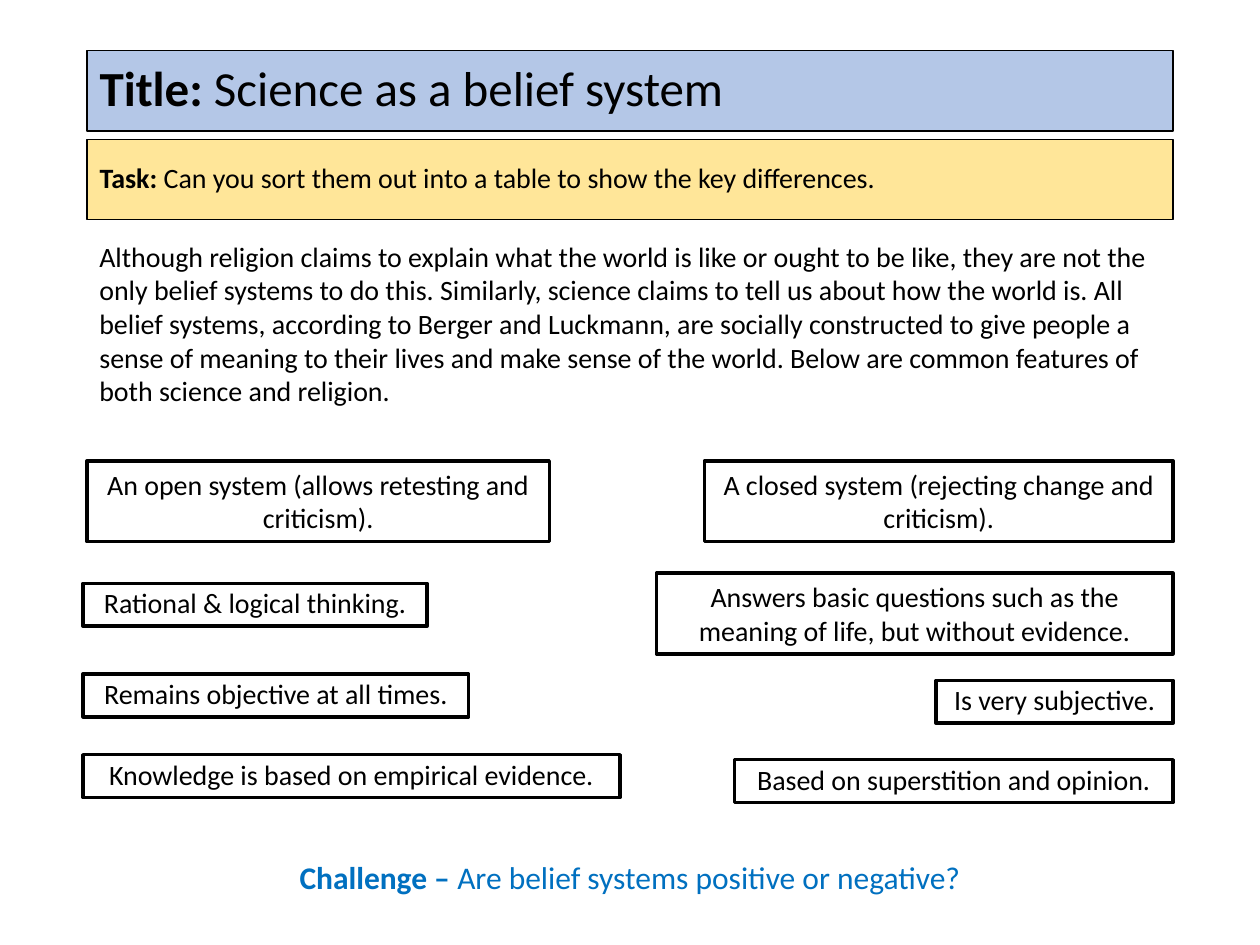
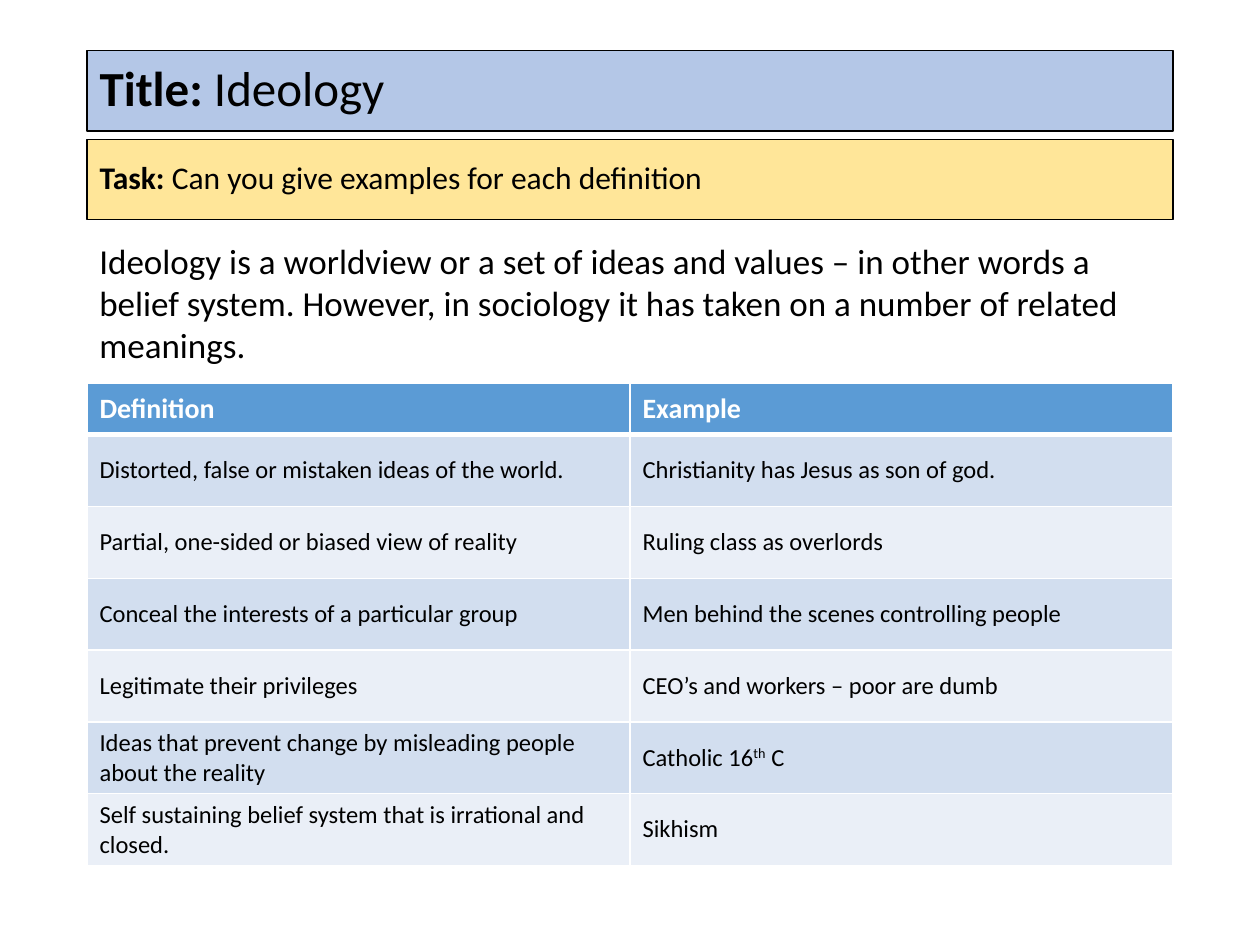
from lxml.etree import SubElement
from pptx import Presentation
from pptx.dml.color import RGBColor
from pptx.enum.text import MSO_ANCHOR, MSO_AUTO_SIZE, PP_ALIGN
from pptx.oxml.ns import qn
from pptx.util import Inches, Pt

BLACK = RGBColor(0x00, 0x00, 0x00)
WHITE = RGBColor(0xFF, 0xFF, 0xFF)
TITLE_BLUE = RGBColor(0xB4, 0xC7, 0xE7)
TASK_YELLOW = RGBColor(0xFF, 0xE6, 0x99)
CHALLENGE_BLUE = RGBColor(0x00, 0x70, 0xC0)
HEADER_BLUE = RGBColor(0x5B, 0x9B, 0xD5)
STRIPES = (RGBColor(0xD2, 0xDE, 0xEF), RGBColor(0xEA, 0xEF, 0xF7))

COLUMNS, ROWS = 100, 75
LEFT, RIGHT = 6.9, 93.1
CONTENT = RIGHT - LEFT
SHORT, TALL = 3.4, 6.4

SCIENCE = [
    (LEFT, 36.6, 36.7, "An open system (allows retesting and criticism)."),
    (6.6, 46.3, 27.3, "Rational & logical thinking."),
    (6.6, 53.5, 30.6, "Remains objective at all times."),
    (6.6, 59.9, 42.6, "Knowledge is based on empirical evidence."),
]
RELIGION = [
    (36.6, 37.2, "A closed system (rejecting change and criticism)."),
    (45.5, 41, "Answers basic questions such as the meaning of life, but without evidence."),
    (54, 18.8, "Is very subjective."),
    (60.3, 34.8, "Based on superstition and opinion."),
]
TWO_LINE_TOPS = (36.6, 45.5)

IDEOLOGY = [
    (["Definition"], ["Example"]),
    (["Distorted, false or mistaken ideas of the world."],
     ["Christianity has Jesus as son of god."]),
    (["Partial, one-sided or biased view of reality"], ["Ruling class as overlords"]),
    (["Conceal the interests of a particular group"],
     ["Men behind the scenes controlling people"]),
    (["Legitimate their privileges"], ["CEO’s and workers – poor are dumb"]),
    (["Ideas that prevent change by misleading people about the reality"],
     ["Catholic 16", "th", " C"]),
    (["Self sustaining belief system that is irrational and closed."], ["Sikhism"]),
]


class Lesson:
    font = "Calibri"

    def __init__(self):
        self.deck = Presentation()
        self.deck.slide_width, self.deck.slide_height = Inches(10), Inches(7.5)
        self.slide = None

    def area(self, left, top, width, height):
        column = self.deck.slide_width / COLUMNS
        row = self.deck.slide_height / ROWS
        return (round(left * column), round(top * row),
                round(width * column), round(height * row))

    def start(self, topic, task, task_size):
        self.slide = self.deck.slides.add_slide(self.deck.slide_layouts[1])
        title, body = self.slide.placeholders
        self.band(title, 4, 6.4, TITLE_BLUE, ("Title: ", topic), 28, 0)
        self.band(body, 11.1, 6.3, TASK_YELLOW, ("Task: ", task), task_size, 10)
        properties = body.text_frame.paragraphs[0]._p.get_or_add_pPr()
        properties.set("marL", "0")
        properties.set("indent", "0")
        SubElement(properties, qn("a:buNone"))

    def band(self, holder, top, height, color, words, size, before):
        place = self.area(LEFT, top, CONTENT, height)
        for name, value in zip(("left", "top", "width", "height"), place):
            setattr(holder, name, value)
        holder.fill.solid()
        holder.fill.fore_color.rgb = color
        self.outline(holder, 0.75)
        frame = holder.text_frame
        frame.auto_size = MSO_AUTO_SIZE.NONE
        frame.vertical_anchor = MSO_ANCHOR.MIDDLE
        self.lead(frame, words, size, line_spacing=0.9, space_before=Pt(before))

    def outline(self, box, width):
        box.line.color.rgb = BLACK
        box.line.width = Pt(width)

    def words(self, frame, parts, size, color=BLACK, bold=False, **layout):
        paragraph = frame.paragraphs[0]
        for name, value in {"alignment": PP_ALIGN.LEFT, **layout}.items():
            setattr(paragraph, name, value)
        look = {"name": self.font, "size": Pt(size), "bold": bold}
        for part in parts:
            run = paragraph.add_run()
            run.text = part
            for name, value in look.items():
                setattr(run.font, name, value)
            run.font.color.rgb = color
        return paragraph.runs

    def lead(self, frame, parts, size, color=BLACK, **layout):
        self.words(frame, parts, size, color, **layout)[0].font.bold = True

    def box(self, left, top, width, height, wrap=True):
        box = self.slide.shapes.add_textbox(*self.area(left, top, width, height))
        box.text_frame.word_wrap = wrap
        return box

    def intro(self, text, height, size):
        self.words(self.box(LEFT, 18.5, CONTENT, height).text_frame, [text], size)

    def card(self, left, top, width, text):
        two_lines = top in TWO_LINE_TOPS
        card = self.box(left, top, width, TALL if two_lines else SHORT, two_lines)
        self.outline(card, 2)
        self.words(card.text_frame, [text], 16, alignment=PP_ALIGN.CENTER,
                   line_spacing=1.0 if two_lines else 0.9)

    def challenge(self, parts):
        self.lead(self.box(LEFT, 67.6, CONTENT, 4).text_frame, parts, 18,
                  CHALLENGE_BLUE, alignment=PP_ALIGN.CENTER)

    def borders(self, cell, widths):
        properties = cell._tc.get_or_add_tcPr()
        for side, width in widths.items():
            line = SubElement(properties, qn(f"a:ln{side}"), w=str(int(Pt(width))))
            SubElement(SubElement(line, qn("a:solidFill")), qn("a:srgbClr"), val=str(WHITE))

    def table(self, entries, top, header, row):
        height = header + row * (len(entries) - 1)
        place = self.area(LEFT, top, CONTENT, height)
        table = self.slide.shapes.add_table(len(entries), 2, *place).table
        for number, pair in enumerate(entries):
            heading = number == 0
            table.rows[number].height = self.area(0, 0, 0, header if heading else row)[3]
            fill = HEADER_BLUE if heading else STRIPES[(number - 1) % 2]
            look = (16, WHITE, True) if heading else (14, BLACK, False)
            widths = {"L": 1, "R": 1, "T": 3 if number == 1 else 1, "B": 3 if heading else 1}
            for cell, parts in zip(table.rows[number].cells, pair):
                self.borders(cell, widths)
                cell.fill.solid()
                cell.fill.fore_color.rgb = fill
                cell.vertical_anchor = MSO_ANCHOR.MIDDLE
                runs = self.words(cell.text_frame, parts, *look)
                for ordinal in runs[1:2]:
                    ordinal._r.get_or_add_rPr().set("baseline", "30000")


def main():
    lesson = Lesson()

    lesson.start("Science as a belief system",
                 "Can you sort them out into a table to show the key differences.", 16)
    lesson.intro("Although religion claims to explain what the world is like or ought to be "
                 "like, they are not the only belief systems to do this. Similarly, science "
                 "claims to tell us about how the world is. All belief systems, according to "
                 "Berger and Luckmann, are socially constructed to give people a sense of "
                 "meaning to their lives and make sense of the world. Below are common "
                 "features of both science and religion.", 14.5, 16)
    for left, top, width, feature in SCIENCE:
        lesson.card(left, top, width, feature)
    for top, width, feature in RELIGION:
        lesson.card(RIGHT - width, top, width, feature)
    lesson.challenge(("Challenge – ", "Are belief systems positive or negative?"))

    lesson.start("Ideology", "Can you give examples for each definition", 18)
    lesson.intro("Ideology is a worldview or a set of ideas and values – in other words a "
                 "belief system. However, in sociology it has taken on a number of related "
                 "meanings.", 17.8, 20)
    lesson.table(IDEOLOGY, 30.4, 4.1, 5.7)

    lesson.deck.save("out.pptx")


if __name__ == "__main__":
    main()
